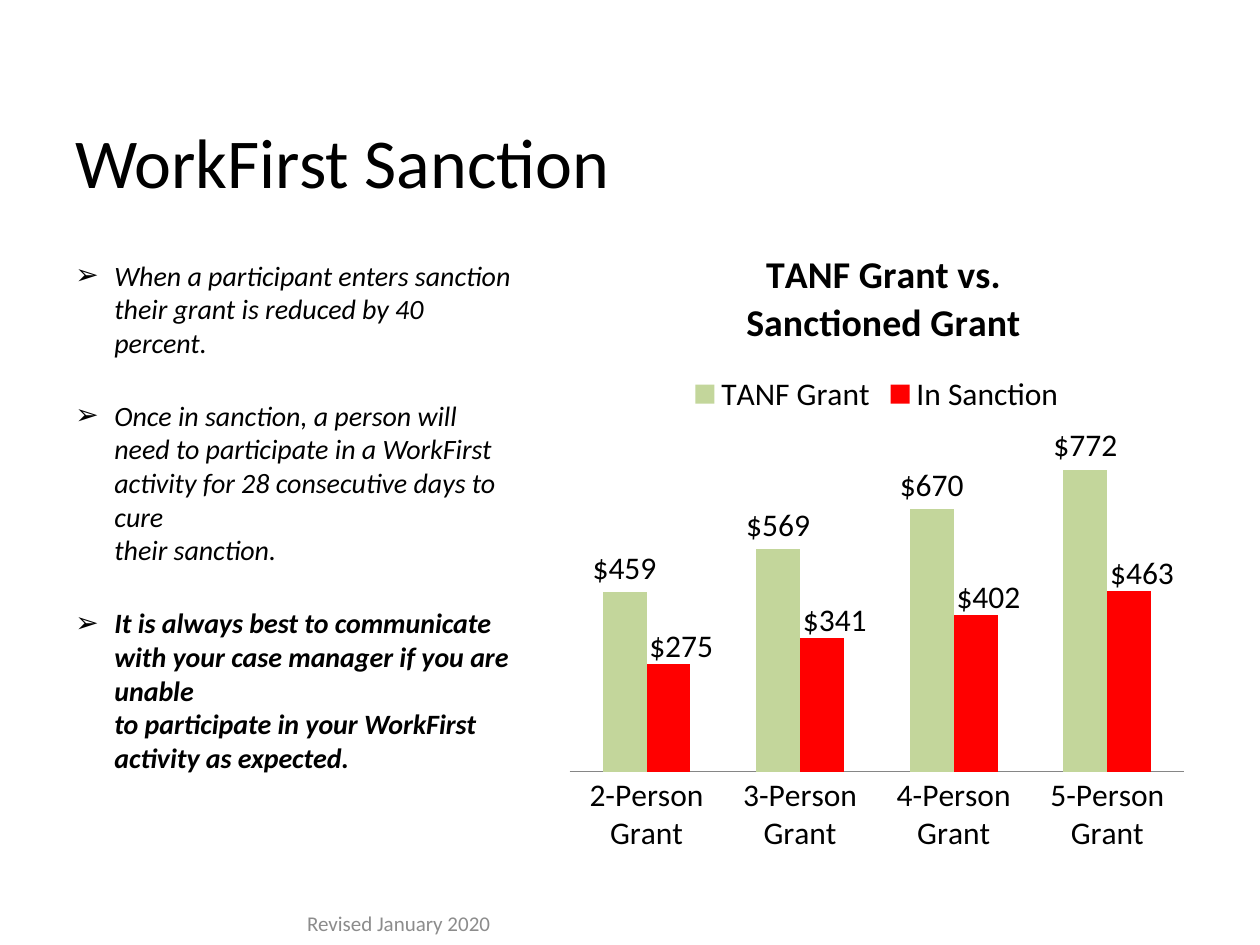
from lxml import etree
from pptx import Presentation
from pptx.chart.data import CategoryChartData
from pptx.dml.color import RGBColor
from pptx.enum.chart import XL_CHART_TYPE, XL_LABEL_POSITION, XL_LEGEND_POSITION, XL_TICK_MARK
from pptx.enum.text import MSO_ANCHOR, PP_ALIGN
from pptx.oxml import parse_xml
from pptx.oxml.ns import nsdecls, qn
from pptx.util import Inches, Pt

COLUMN = XL_CHART_TYPE.COLUMN_CLUSTERED
OUTSIDE = XL_LABEL_POSITION.OUTSIDE_END
TOP_LEGEND = XL_LEGEND_POSITION.TOP
NO_TICK = XL_TICK_MARK.NONE
TOP, MIDDLE, BOTTOM = MSO_ANCHOR.TOP, MSO_ANCHOR.MIDDLE, MSO_ANCHOR.BOTTOM
LEFT, CENTER = PP_ALIGN.LEFT, PP_ALIGN.CENTER
BLACK = RGBColor(0x00, 0x00, 0x00)
GRAY = RGBColor(0x8C, 0x8C, 0x8C)
AXIS_GRAY = RGBColor(0x86, 0x86, 0x86)
GREEN = RGBColor(0xC3, 0xD6, 0x9B)
RED = RGBColor(0xFF, 0x00, 0x00)
FONT = "Calibri"
DOLLARS = '"$"#,##0_);[Red]\\("$"#,##0\\)'

RULES = [
    ("When a participant enters sanction their grant is reduced by 40 percent.", False),
    ("Once in sanction, a person will need to participate in a WorkFirst activity "
     "for 28 consecutive days to cure\vtheir sanction.", False),
    ("It is always best to communicate with your case manager if you are unable\v"
     "to participate in your WorkFirst activity as expected.", True),
]
HOUSEHOLDS = [f"{size}-Person Grant" for size in range(2, 6)]
GRANTS = [
    ("TANF Grant", GREEN, (420, 521, 613, 706), ("$459", "$569", "$670", "$772"), None),
    ("In Sanction", RED, (252, 312, 367, 423), ("$275", "$341", "$402", "$463"),
     {"x": 0.02, "y": 0.01}),
]


def set_font(font, size, color=BLACK, bold=False, italic=False):
    """Apply the typeface and the given format to a font."""
    font.name, font.size, font.bold, font.italic = FONT, Pt(size), bold, italic
    font.color.rgb = color


def add_box(slide, left, top, width, height, anchor=TOP):
    """Add a wrapping text box and return its text frame."""
    box = slide.shapes.add_textbox(*map(Inches, (left, top, width, height)))
    frame = box.text_frame
    frame.word_wrap = True
    frame.vertical_anchor = anchor
    return frame


def write(para, text, align=LEFT, bullet=None, before=0, **style):
    """Write formatted text into a paragraph, with an optional bullet."""
    para.text = text
    para.alignment = align
    para.space_before = Pt(before)
    if bullet:
        settings = para._p.get_or_add_pPr()
        settings.set("marL", str(Inches(0.31)))
        settings.set("indent", str(-Inches(0.31)))
        etree.SubElement(settings, qn("a:buFont")).set("typeface", FONT)
        etree.SubElement(settings, qn("a:buChar")).set("char", bullet)
    for span in para.runs:
        set_font(span.font, **style)


def add_rules(slide):
    """Add the bulleted rules about sanctions."""
    frame = add_box(slide, 0.5, 2, 3.67, 4.33)
    for number, (text, bold) in enumerate(RULES):
        para = frame.add_paragraph() if number else frame.paragraphs[0]
        write(para, text, bullet="➢", before=22.6 if number else 0,
              size=16, bold=bold, italic=True)


def make_layout(inner=False, edge=False, **shares):
    """Return a manual chart layout from shares of the chart's size."""
    target = '<c:layoutTarget val="inner"/>' if inner else ""
    modes = '<c:xMode val="edge"/><c:yMode val="edge"/>' if edge else ""
    places = "".join(f'<c:{key} val="{share}"/>' for key, share in shares.items())
    return parse_xml(f'<c:layout {nsdecls("c")}><c:manualLayout>'
                     f'{target}{modes}{places}</c:manualLayout></c:layout>')


def place_part(part, index, **layout):
    """Give a chart part a manual layout in place of any it has."""
    for old in part.findall(qn("c:layout")):
        part.remove(old)
    part.insert(index, make_layout(**layout))


def style_series(series, color, captions, offset):
    """Colour one series and caption its columns."""
    series.format.fill.solid()
    series.format.fill.fore_color.rgb = color
    labels = series.data_labels
    labels.show_value = True
    labels.number_format = DOLLARS
    labels.number_format_is_linked = False
    labels.position = OUTSIDE
    set_font(labels.font, 18)
    for index, caption in enumerate(captions):
        label = series.points[index].data_label
        write(label.text_frame.paragraphs[0], caption, align=CENTER, size=18)
        label.position = OUTSIDE
    if offset:
        for node in series._element.findall(f'{qn("c:dLbls")}/{qn("c:dLbl")}'):
            place_part(node, 1, **offset)


def style_axes(chart):
    """Show only the category axis and fix the hidden value scale."""
    categories, values = chart.category_axis, chart.value_axis
    categories.major_tick_mark = NO_TICK
    categories.format.line.color.rgb = AXIS_GRAY
    values.visible = False
    values.has_major_gridlines = False
    values.minimum_scale, values.maximum_scale = 0, 800
    values.tick_labels.number_format = DOLLARS
    values.tick_labels.number_format_is_linked = False


def add_title(chart):
    """Add the two-line chart title."""
    chart.has_title = True
    title = chart.chart_title
    title.text_frame.text = "TANF Grant vs.\nSanctioned Grant"
    for para in title.text_frame.paragraphs:
        write(para, para.text, align=CENTER, size=21.6, bold=True)
    title.include_in_layout = False
    place_part(title._element, 1, edge=True, x=0.29, y=0.02)


def add_grant_chart(slide):
    """Add the column chart comparing full and sanctioned grants."""
    data = CategoryChartData(number_format=DOLLARS)
    data.categories = HOUSEHOLDS
    for name, _, amounts, _, _ in GRANTS:
        data.add_series(name, amounts)
    place = map(Inches, (4.42, 1.85, 5.08, 5.03))
    chart = slide.shapes.add_chart(COLUMN, *place, data).chart
    set_font(chart.font, 18)
    add_title(chart)
    chart.has_legend = True
    chart.legend.position = TOP_LEGEND
    chart.legend.include_in_layout = False
    set_font(chart.legend.font, 18)
    plot = chart.plots[0]
    plot.gap_width, plot.overlap = 150, 0
    plot.vary_by_categories = False
    for series, (_, color, _, captions, offset) in zip(plot.series, GRANTS):
        style_series(series, color, captions, offset)
    style_axes(chart)
    place_part(chart._chartSpace.chart.plotArea, 0, inner=True, edge=True,
               x=0.02, y=0.31, w=0.96, h=0.54)


def main():
    """Build the sanction slide and save it."""
    deck = Presentation()
    deck.slide_width, deck.slide_height = Inches(10), Inches(7.5)
    slide = deck.slides.add_slide(deck.slide_layouts[6])
    heading = add_box(slide, 0.5, 0.76, 6.75, 0.9, BOTTOM)
    write(heading.paragraphs[0], "WorkFirst Sanction", size=40)
    add_rules(slide)
    add_grant_chart(slide)
    footer = add_box(slide, 1.58, 7.13, 3.17, 0.4, MIDDLE)
    write(footer.paragraphs[0], "Revised January 2020", align=CENTER, size=12, color=GRAY)
    deck.save("out.pptx")


if __name__ == "__main__":
    main()
